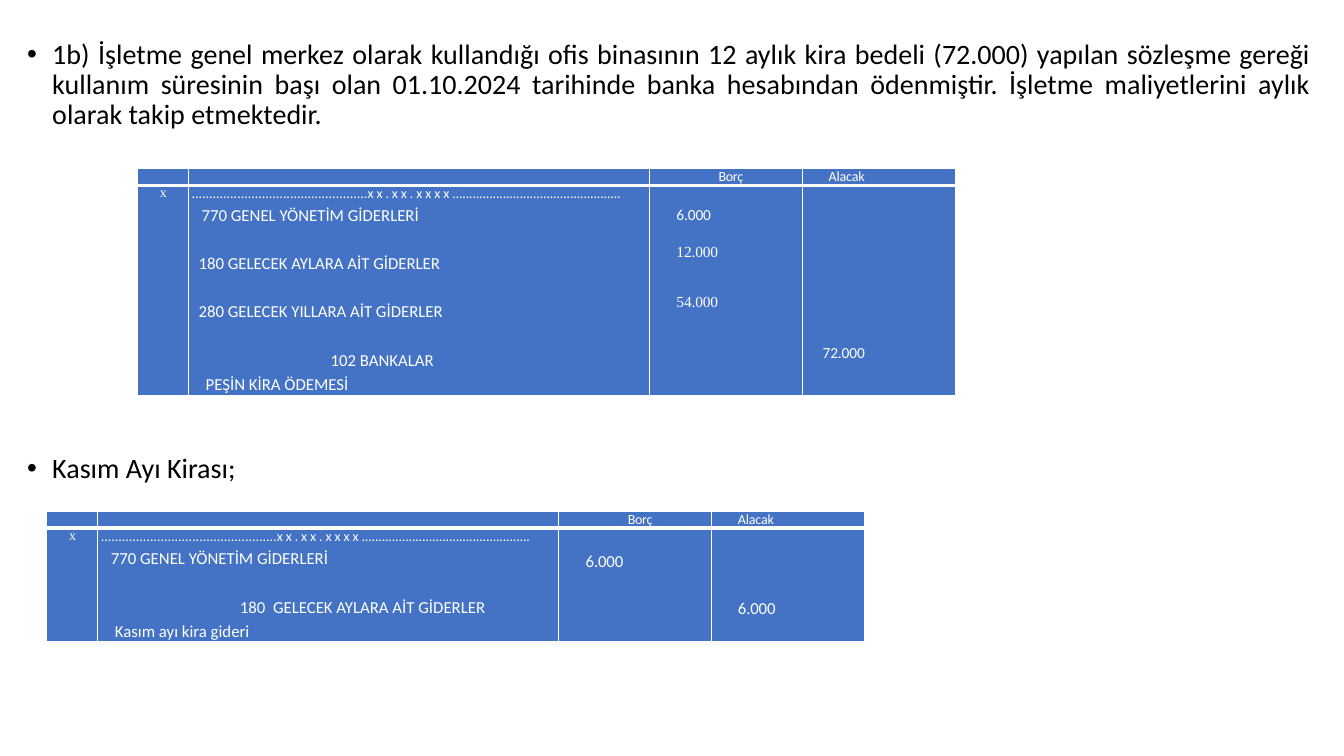
from lxml import etree
from pptx import Presentation
from pptx.dml.color import RGBColor
from pptx.enum.text import PP_ALIGN
from pptx.oxml.ns import qn
from pptx.util import Inches, Pt

CENTER, LEFT, FULL = PP_ALIGN.CENTER, PP_ALIGN.LEFT, PP_ALIGN.JUSTIFY
INK = {"blue": "4472C4", "white": "FFFFFF", "black": "000000"}
SANS, SERIF = "Calibri", "Times New Roman"
WIDTHS = [0.51, 4.57, 1.52, 1.52]
DOTS = "." * 50


class Deck:
    def __init__(self):
        self.prs = Presentation()
        self.prs.slide_width = Inches(13.33)
        self.prs.slide_height = Inches(7.5)
        self.slide = self.prs.slides.add_slide(self.prs.slide_layouts[6])

    def run(self, para, text, size, ink="white", font=SANS, gap=0):
        run = para.add_run()
        run.text = text
        run.font.size = Pt(size)
        run.font.name = font
        run.font.color.rgb = RGBColor.from_string(INK[ink])
        if gap:
            run._r.get_or_add_rPr().set("spc", str(round(gap * 100)))

    def para(self, frame, first, indent=0, before=0, align=LEFT):
        para = frame.paragraphs[0] if first else frame.add_paragraph()
        para.alignment = align
        para.space_before = Pt(before)
        para._p.get_or_add_pPr().set("marL", str(Inches(indent)))
        return para

    def bullets(self, box, items):
        frame = self.slide.shapes.add_textbox(*map(Inches, box)).text_frame
        frame.word_wrap = True
        for i, (text, before) in enumerate(items):
            para = self.para(frame, i == 0, 0.25, before, FULL)
            para.line_spacing = 0.9
            props = para._p.get_or_add_pPr()
            props.set("indent", str(Inches(-0.25)))
            etree.SubElement(props, qn("a:buFont")).set("typeface", "Arial")
            etree.SubElement(props, qn("a:buChar")).set("char", "•")
            self.run(para, text, 20, "black")

    def edge(self, cell, side, width):
        line = etree.SubElement(cell._tc.get_or_add_tcPr(), qn("a:ln" + side))
        line.set("w", str(Pt(width)))
        fill = etree.SubElement(line, qn("a:solidFill"))
        etree.SubElement(fill, qn("a:srgbClr")).set("val", INK["white"])

    def cell(self, cell, lines, head, top=0):
        cell.margin_left = cell.margin_right = cell.margin_bottom = 0
        cell.margin_top = Inches(top)
        for side in "LRTB":
            thick = side == ("B" if head else "T")
            self.edge(cell, side, 3 if thick else 1)
        cell.fill.solid()
        cell.fill.fore_color.rgb = RGBColor.from_string(INK["blue"])
        for i, (indent, before, align, runs) in enumerate(lines):
            para = self.para(cell.text_frame, i == 0, indent, before, align)
            for text, size, font, gap in runs:
                self.run(para, text, size, font=font, gap=gap)
        if not lines:
            end = etree.SubElement(cell.text_frame.paragraphs[0]._p, qn("a:endParaRPr"))
            end.set("sz", "1000")

    def ledger(self, left, top, height, entries, debit, credit):
        rows = [0.17, height - 0.17]
        table = self.slide.shapes.add_table(
            2, 4, Inches(left), Inches(top), Inches(sum(WIDTHS)), Inches(height)).table
        table.first_row = table.horz_banding = False
        for col, width in zip(table.columns, WIDTHS):
            col.width = Inches(width)
        for row, size in zip(table.rows, rows):
            row.height = Inches(size)
        heads = [[], [],
                 [(0.1, 0, CENTER, [("Borç", 10, SANS, -0.2)])],
                 [(0.26, 0, LEFT, [("Alacak", 10, SANS, -0.1)])]]
        for col, lines in enumerate(heads):
            self.cell(table.cell(0, col), lines, True)
        mark = [(0.01, 0, CENTER, [("x", 10, SERIF, -0.5)])]
        date = (0.03, 0, LEFT, [(DOTS, 10, SANS, 0), ("xx.xx.xxxx", 10, SANS, 2.1),
                                (DOTS, 10, SANS, -0.1)])
        names = [date] + [(indent, before, LEFT, [(text, 12, SANS, 0)])
                          for text, indent, before in entries]
        self.cell(table.cell(1, 0), mark, False)
        self.cell(table.cell(1, 1), names, False)
        for col, (start, sums) in enumerate([debit, credit], 2):
            lines = [(indent, before, LEFT, [(text, size, font, -0.1)])
                     for text, indent, before, size, font in sums]
            self.cell(table.cell(1, col), lines, False, start)


def main():
    deck = Deck()
    deck.bullets((0.17, 0.35, 12.93, 6.88), [
        ("1b) İşletme genel merkez olarak kullandığı ofis binasının 12 aylık kira bedeli "
         "(72.000) yapılan sözleşme gereği kullanım süresinin başı olan 01.10.2024 tarihinde "
         "banka hesabından ödenmiştir. İşletme maliyetlerini aylık olarak takip etmektedir.", 0),
        ("Kasım Ayı Kirası;", 231)])
    deck.ledger(
        1.36, 1.67, 2.25,
        [("770 GENEL YÖNETİM GİDERLERİ", 0.13, 2.5),
         ("180 GELECEK AYLARA AİT GİDERLER", 0.1, 19.6),
         ("280 GELECEK YILLARA AİT GİDERLER", 0.1, 19.6),
         ("102 BANKALAR", 1.41, 20.1),
         ("PEŞİN KİRA ÖDEMESİ", 0.17, 3)],
        (0.2, [("6.000", 0.27, 0, 11, SANS), ("12.000", 0.27, 13.7, 11, SERIF),
               ("54.000", 0.27, 23.5, 11, SERIF)]),
        (1.57, [("72.000", 0.2, 0, 11, SANS)]))
    deck.ledger(
        0.46, 5.07, 1.3,
        [("770 GENEL YÖNETİM GİDERLERİ", 0.13, 2.5),
         ("180  GELECEK AYLARA AİT GİDERLER", 1.41, 20.1),
         ("Kasım ayı kira gideri", 0.17, 3)],
        (0.23, [("6.000", 0.27, 0, 12, SANS)]),
        (0.7, [("6.000", 0.26, 0, 12, SANS)]))
    deck.prs.save("out.pptx")


if __name__ == "__main__":
    main()
